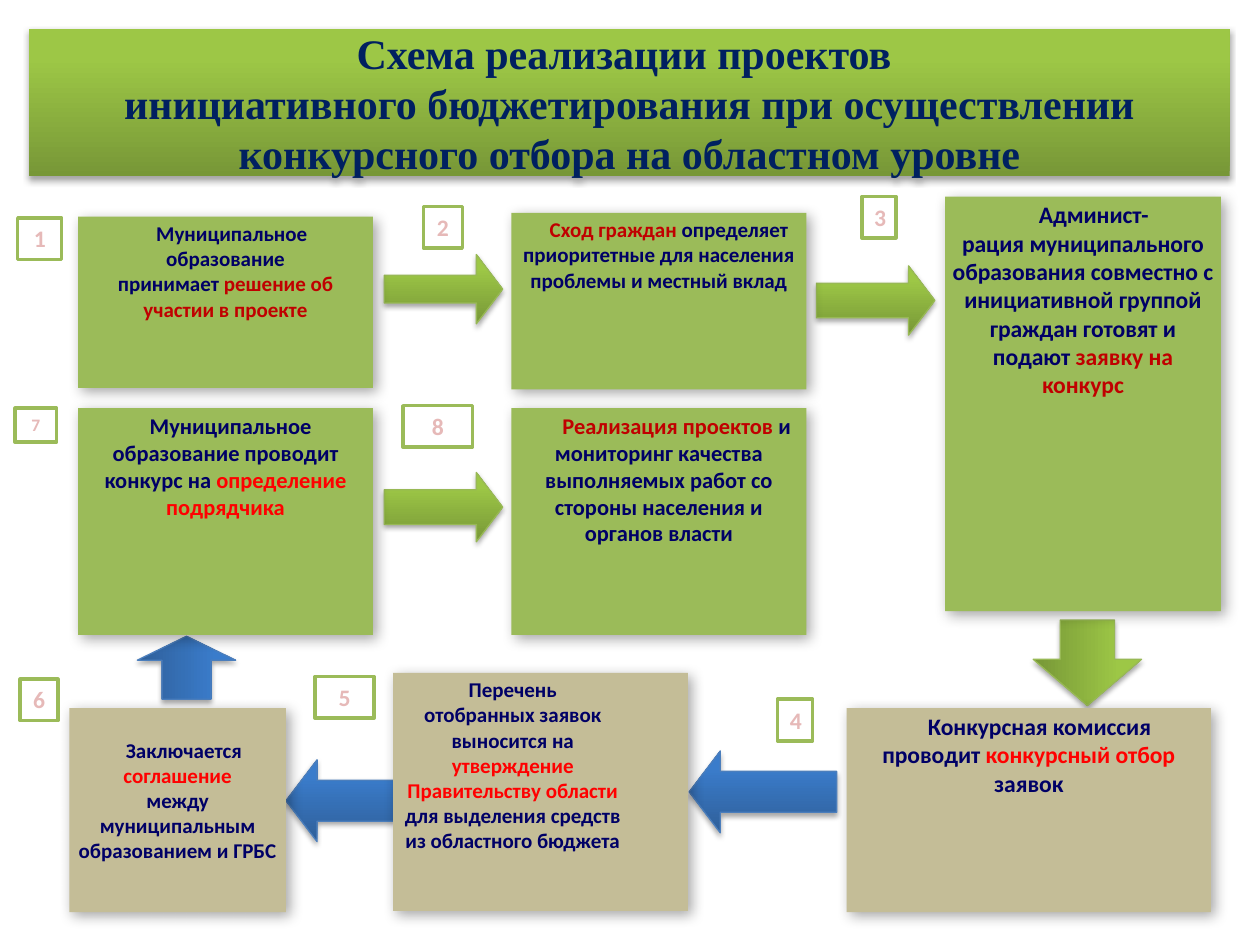
import pptx
import pptx.util
from dataclasses import dataclass
from lxml import etree
from pptx.dml.color import RGBColor
from pptx.enum.shapes import MSO_SHAPE
from pptx.enum.text import MSO_ANCHOR, MSO_AUTO_SIZE, PP_ALIGN
from pptx.oxml import parse_xml
from pptx.oxml.ns import nsdecls
from pptx.util import Inches, Pt


@dataclass(frozen=True)
class Theme:
    green: str = "9BBB59"
    tan: str = "C4BD97"
    white: str = "FFFFFF"
    navy: str = "000066"
    title_ink: str = "002060"
    dark_red: str = "C00000"
    red: str = "FF0000"
    pink: str = "E6B9B8"
    digit_edge: str = "C0504D"
    green_fade: tuple = ("779737", "9DC746")
    blue_fade: tuple = ("2F5F99", "3A7CCB")
    green_edge: str = "98B955"
    blue_edge: str = "4B7EBC"
    body_font: str = "Calibri"
    title_font: str = "Times New Roman"
    title_size: float = 24
    small: float = 12
    medium: float = 12.8
    large: float = 13.5
    tiny: float = 10
    soft_shadow: tuple = (3.1, 1.8, 90)
    deep_shadow: tuple = (8, 3, 45)


theme = Theme()
deck = pptx.Presentation()
deck.slide_width, deck.slide_height = Inches(10), Inches(7.5)
page = deck.slides.add_slide(deck.slide_layouts[6])


def add_figure(kind, place, fill, edge=None, edge_width=0.75, shadow=None):
    """Add a shape; fill is one colour or a (bottom, top) fade, shadow is (blur, distance, angle)."""
    figure = page.shapes.add_shape(kind, *(Inches(length) for length in place))
    if isinstance(fill, tuple):
        figure.fill.gradient()
        figure.fill.gradient_angle = 90
        for stop, position, colour in zip(figure.fill.gradient_stops, (0, 0.8), fill):
            stop.position = position
            stop.color.rgb = RGBColor.from_string(colour)
    else:
        figure.fill.solid()
        figure.fill.fore_color.rgb = RGBColor.from_string(fill)
    if edge:
        figure.line.color.rgb = RGBColor.from_string(edge)
        figure.line.width = Pt(edge_width)
    else:
        figure.line.fill.background()
    figure.shadow.inherit = False
    if shadow:
        blur, distance, angle = shadow
        effects = figure._element.spPr.find(pptx.oxml.ns.qn("a:effectLst"))
        effects.append(parse_xml(
            f'<a:outerShdw {nsdecls("a")} blurRad="{Pt(blur)}" dist="{Pt(distance)}" '
            f'dir="{angle * 60000}" rotWithShape="0"><a:srgbClr val="000000">'
            '<a:alpha val="35000"/></a:srgbClr></a:outerShdw>'))
    return figure


def write(figure, paragraphs, size, font=theme.body_font):
    """Fill a figure with centred bold paragraphs, each a list of (text, colour) spans."""
    frame = figure.text_frame
    frame.word_wrap = True
    for index, spans in enumerate(paragraphs):
        para = frame.paragraphs[0] if index == 0 else frame.add_paragraph()
        para.alignment = PP_ALIGN.CENTER
        for text, colour in spans:
            span = para.add_run()
            span.text = text
            span.font.name, span.font.size, span.font.bold = font, Pt(size), True
            span.font.color.rgb = RGBColor.from_string(colour)


# Arrows: direction, place, green or blue, rotation, shaft width, head length
right, left = MSO_SHAPE.RIGHT_ARROW, MSO_SHAPE.LEFT_ARROW
green = (theme.green_fade, theme.green_edge)
blue = (theme.blue_fade, theme.blue_edge)
arrows = [
    (left, (5.47, 5.96, 1.17, 0.65), blue, 0, 0.5, 0.38),
    (right, (6.48, 2.11, 0.94, 0.55), green, 0, 0.5, 0.38),
    (right, (3.05, 2.02, 0.94, 0.55), green, 0, 0.4, 0.38),
    (right, (3.05, 3.75, 0.94, 0.55), green, 0, 0.5, 0.38),
    (left, (1.23, 4.91, 0.5, 0.78), blue, 90, 0.5, 0.38),
    (left, (2.27, 6.03, 0.86, 0.65), blue, 0, 0.5, 0.38),
    (right, (8.29, 4.83, 0.68, 0.86), green, 90, 0.5, 0.54),
]
for kind, place, (fade, edge), rotation, shaft, head in arrows:
    arrow = add_figure(kind, place, fade, edge, shadow=theme.soft_shadow)
    arrow.rotation = rotation
    arrow.adjustments[0], arrow.adjustments[1] = shaft, head

# Steps: place, fill, type size, first-line shift (negative is to the left), top inset, paragraphs
navy, dark_red, red = theme.navy, theme.dark_red, theme.red
steps = [
    ((0.62, 1.72, 2.34, 1.36), theme.green, theme.small, 0.1, 0.03, [
        [("Муниципальное образование", navy)],
        [("принимает ", navy), ("решение об участии в проекте", dark_red)]]),
    ((4.06, 1.69, 2.34, 1.4), theme.green, theme.small, 0.16, 0.03, [
        [("Сход граждан ", dark_red), ("определяет", navy)],
        [("приоритетные для населения проблемы и местный вклад", navy)]]),
    ((7.5, 1.56, 2.19, 3.29), theme.green, theme.large, 0.17, 0.03, [
        [("Админист-", navy)],
        [("рация муниципального образования совместно с инициативной группой "
          "граждан готовят и подают ", navy), ("заявку на конкурс", dark_red)]]),
    ((6.72, 5.62, 2.89, 1.62), theme.tan, theme.large, 0.17, 0.03, [
        [("Конкурсная комиссия", navy)],
        [("проводит ", navy), ("конкурсный отбор", red), (" заявок", navy)]]),
    ((0.55, 5.62, 1.72, 1.62), theme.tan, theme.small, 0.1, 0.23, [
        [("Заключается ", navy), ("соглашение", red)],
        [("между муниципальным образованием и ГРБС", navy)]]),
    ((0.62, 3.24, 2.34, 1.8), theme.green, theme.medium, 0.08, 0.03, [
        [("Муниципальное образование проводит конкурс на ", navy),
         ("определение подрядчика", red)]]),
    ((3.12, 5.34, 2.34, 1.89), theme.tan, theme.small, -0.44, 0.03, [
        [("Перечень", navy)],
        [("отобранных заявок выносится на ", navy), ("утверждение", red)],
        [("Правительству области ", red),
         ("для выделения средств из областного бюджета", navy)]]),
    ((4.06, 3.24, 2.34, 1.8), theme.green, theme.medium, 0.28, 0.03, [
        [("Реализация проектов ", dark_red),
         ("и мониторинг качества выполняемых работ со стороны населения "
          "и органов власти", navy)]]),
]
for place, fill, size, shift, top, paragraphs in steps:
    box = add_figure(MSO_SHAPE.RECTANGLE, place, fill, shadow=theme.deep_shadow)
    frame = box.text_frame
    frame.vertical_anchor = MSO_ANCHOR.TOP
    frame.margin_left = frame.margin_right = Inches(0.05)
    frame.margin_top, frame.margin_bottom = Inches(top), Inches(0.03)
    write(box, paragraphs, size)
    properties = frame.paragraphs[0]._p.get_or_add_pPr()
    properties.set("indent" if shift > 0 else "marR", str(Inches(abs(shift))))

# Title banner
banner = add_figure(MSO_SHAPE.RECTANGLE, (0.23, 0.23, 9.53, 1.17), theme.green_fade,
                    shadow=theme.soft_shadow)
frame = banner.text_frame
frame.vertical_anchor = MSO_ANCHOR.MIDDLE
frame.margin_left = frame.margin_right = Inches(0.07)
frame.margin_top = frame.margin_bottom = Inches(0.04)
write(banner, [
    [("Схема реализации проектов ", theme.title_ink)],
    [("инициативного бюджетирования при осуществлении "
      "конкурсного отбора на областном уровне", theme.title_ink)],
], theme.title_size, theme.title_font)

# Step numbers, in order
badges = [
    (0.14, 1.73, 0.35, 0.33), (3.36, 1.64, 0.31, 0.33), (6.84, 1.56, 0.27, 0.33),
    (6.17, 5.55, 0.28, 0.33), (2.5, 5.37, 0.47, 0.33), (0.16, 5.39, 0.3, 0.33),
    (0.12, 3.24, 0.33, 0.27), (3.2, 3.22, 0.55, 0.33),
]
for number, place in enumerate(badges, start=1):
    badge = add_figure(MSO_SHAPE.RECTANGLE, place, theme.white, theme.green, 2)
    frame = badge.text_frame
    frame.vertical_anchor = MSO_ANCHOR.TOP
    frame.auto_size = MSO_AUTO_SIZE.SHAPE_TO_FIT_TEXT
    write(badge, [[(str(number), theme.pink)]], theme.tiny if number == 7 else theme.large)
    digit = frame.paragraphs[0].runs[0]
    outline = etree.fromstring(
        f'<a:ln {nsdecls("a")} w="{Pt(1.75)}"><a:solidFill>'
        f'<a:srgbClr val="{theme.digit_edge}"/></a:solidFill></a:ln>')
    digit._r.get_or_add_rPr().insert(0, outline)

deck.save("out.pptx")
